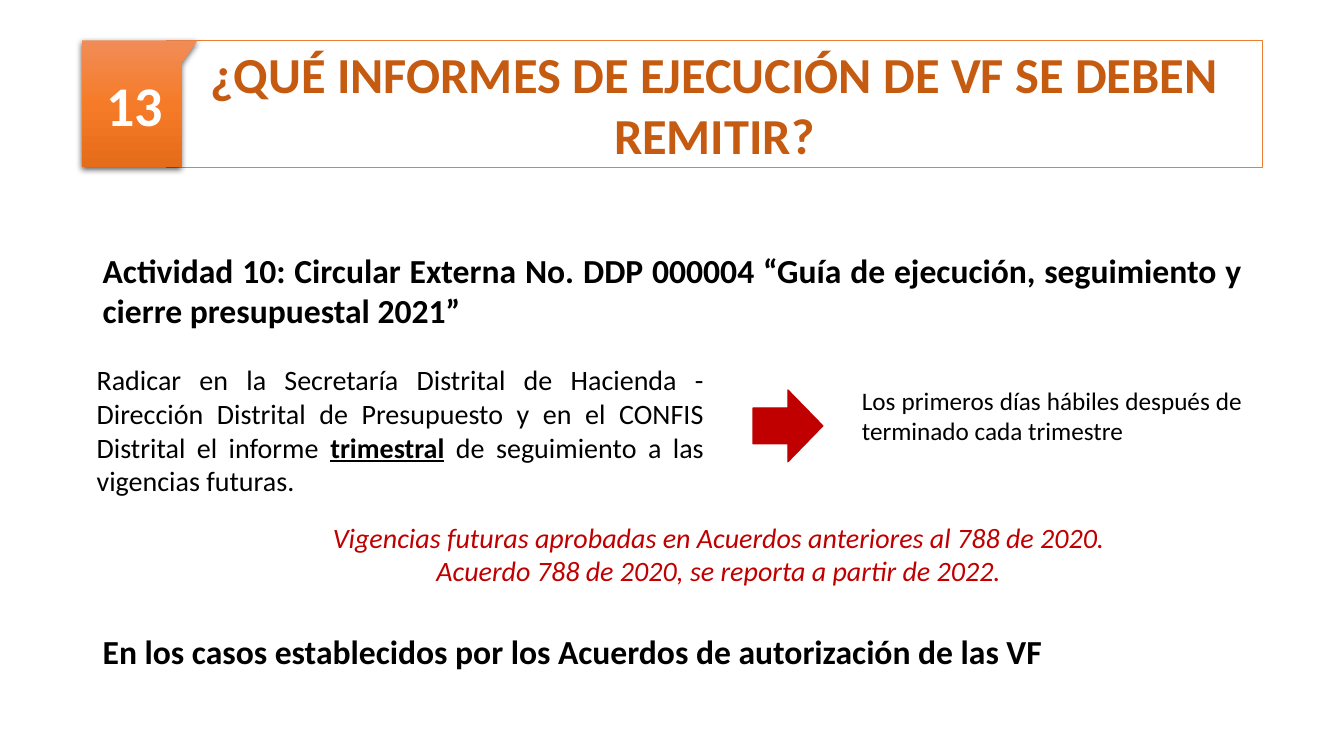
from copy import deepcopy

from pptx import Presentation
from pptx.dml.color import RGBColor
from pptx.enum.shapes import MSO_SHAPE
from pptx.enum.text import MSO_ANCHOR, PP_ALIGN
from pptx.oxml import parse_xml
from pptx.oxml.ns import nsdecls, qn
from pptx.util import Inches, Pt

TITLE_ONLY = 5
BLACK, WHITE, RED = "000000", "FFFFFF", "C00000"
ORANGE, DARK_ORANGE = "ED7D31", "C55A11"
TAB_STOPS = ((0, "F18C57"), (0.5, "F67B28"), (1, "E56C19"))


def color(value):
    """Turn a hex string into a color."""
    return RGBColor.from_string(value)


def write(frame, paragraphs, size, ink, align, bold=False, italic=False):
    """Fill a text frame; each paragraph is a list of (text, emphasized) spans."""
    frame.word_wrap = True
    for index, spans in enumerate(paragraphs):
        para = frame.add_paragraph() if index else frame.paragraphs[0]
        para.alignment = align
        font = para.font
        font.name, font.size, font.bold, font.italic = "Calibri", Pt(size), bold, italic
        font.color.rgb = color(ink)
        for text, emphasized in spans:
            span = para.add_run()
            span.text = text
            if emphasized:
                span.font.bold = span.font.underline = True


def add_text(page, box, paragraphs, size, ink=BLACK, align=PP_ALIGN.JUSTIFY, **style):
    """Add a wrapped text box."""
    shape = page.shapes.add_textbox(*map(Inches, box))
    write(shape.text_frame, paragraphs, size, ink, align, **style)


def add_number_tab(page, box, number):
    """Draw the folded number tab with its gradient and shadow."""
    left, top, width, height = box
    edge, fold = left + width * 0.86, top + height * 0.18
    builder = page.shapes.build_freeform(Inches(left), Inches(top))
    corners = ((left, top + height), (edge, top + height), (edge, fold), (left + width, top))
    builder.add_line_segments([(Inches(x), Inches(y)) for x, y in corners])
    tab = builder.convert_to_shape()
    tab.line.fill.background()
    tab.fill.gradient()
    tab.fill.gradient_angle = 270
    properties = tab.element.spPr
    stops = properties.find(".//" + qn("a:gsLst"))
    stops.append(deepcopy(stops[0]))
    for stop, (position, value) in zip(tab.fill.gradient_stops, TAB_STOPS):
        stop.position = position
        stop.color.rgb = color(value)
    tab.shadow.inherit = False
    properties.find(qn("a:effectLst")).append(parse_xml(
        f'<a:outerShdw {nsdecls("a")} blurRad="{Pt(4.5)}" dist="{Pt(1.5)}" dir="5400000" '
        'algn="ctr" rotWithShape="0"><a:srgbClr val="000000"><a:alpha val="63000"/>'
        '</a:srgbClr></a:outerShdw>'))
    frame = tab.text_frame
    frame.vertical_anchor = MSO_ANCHOR.MIDDLE
    frame.margin_left = frame.margin_top = frame.margin_bottom = Inches(0.1)
    frame.margin_right = Inches(0.2)
    write(frame, [[(number, False)]], 40, WHITE, PP_ALIGN.CENTER, bold=True)


def add_header(page, box, number, text):
    """Place the rounded title with the number tab at its left."""
    left, top, width, height = box
    indent = 0.84
    title = page.shapes.title
    title.left, title.top = Inches(left + indent), Inches(top)
    title.width, title.height = Inches(width - indent), Inches(height)
    title.element.spPr.append(parse_xml(
        f'<a:prstGeom {nsdecls("a")} prst="roundRect"><a:avLst/></a:prstGeom>'))
    title.fill.solid()
    title.fill.fore_color.rgb = color(WHITE)
    title.line.color.rgb = color(ORANGE)
    title.line.width = Pt(1)
    title.text_frame.vertical_anchor = MSO_ANCHOR.MIDDLE
    write(title.text_frame, [[(text, False)]], 36, DARK_ORANGE, PP_ALIGN.CENTER, bold=True)
    add_number_tab(page, (left, top, 1.15, height), number)


def add_duty(page, box, duty, deadline):
    """Place a duty, an arrow and its deadline side by side."""
    left, top, width, height = box
    add_text(page, (left, top, 6.22, height), [duty], 20)
    arrow = page.shapes.add_shape(
        MSO_SHAPE.RIGHT_ARROW, *map(Inches, (left + 6.61, top + 0.32, 0.69, 0.71)))
    arrow.shadow.inherit = False
    arrow.fill.solid()
    arrow.fill.fore_color.rgb = color(RED)
    arrow.line.color.rgb = color(RED)
    arrow.line.width = Pt(1)
    add_text(page, (left + 7.59, top + 0.22, width - 7.59, 0.71), [deadline], 18)


def add_body(page, box):
    """Stack the activity, its duty, the note and the closing line."""
    left, top, width, height = box
    add_text(page, (left + 0.06, top, width - 0.06, 0.91), [[(
        "Actividad 10: Circular Externa No. DDP 000004 “Guía de ejecución, "
        "seguimiento y cierre presupuestal 2021”", False)]], 24, bold=True)
    add_duty(page, (left, top + 1.12, width, 1.45), [
        ("Radicar en la Secretaría Distrital de Hacienda - Dirección Distrital de "
         "Presupuesto y en el CONFIS Distrital el informe ", False),
        ("trimestral", True),
        (" de seguimiento a las vigencias futuras. ", False),
    ], [("Los primeros días hábiles después de terminado cada trimestre", False)])
    add_text(page, (left + 1.26, top + 2.68, 10.02, 0.77), [
        [("Vigencias futuras aprobadas en Acuerdos anteriores al 788 de 2020.", False)],
        [("Acuerdo 788 de 2020, se reporta a partir de 2022.", False)],
    ], 20, RED, PP_ALIGN.CENTER, italic=True)
    add_text(page, (left + 0.06, top + height - 0.5, 11.22, 0.5), [[(
        "En los casos establecidos por los Acuerdos de autorización de las VF", False)]],
        24, align=PP_ALIGN.LEFT, bold=True)


def main():
    """Build and save the deck."""
    deck = Presentation()
    deck.slide_width, deck.slide_height = Inches(13.33), Inches(7.5)
    page = deck.slides.add_slide(deck.slide_layouts[TITLE_ONLY])
    add_header(page, (0.81, 0.4, 11.71, 1.26), "13",
               "¿QUÉ INFORMES DE EJECUCIÓN DE VF SE DEBEN REMITIR?")
    add_body(page, (0.86, 2.43, 11.56, 4.28))
    deck.save("out.pptx")


if __name__ == "__main__":
    main()
